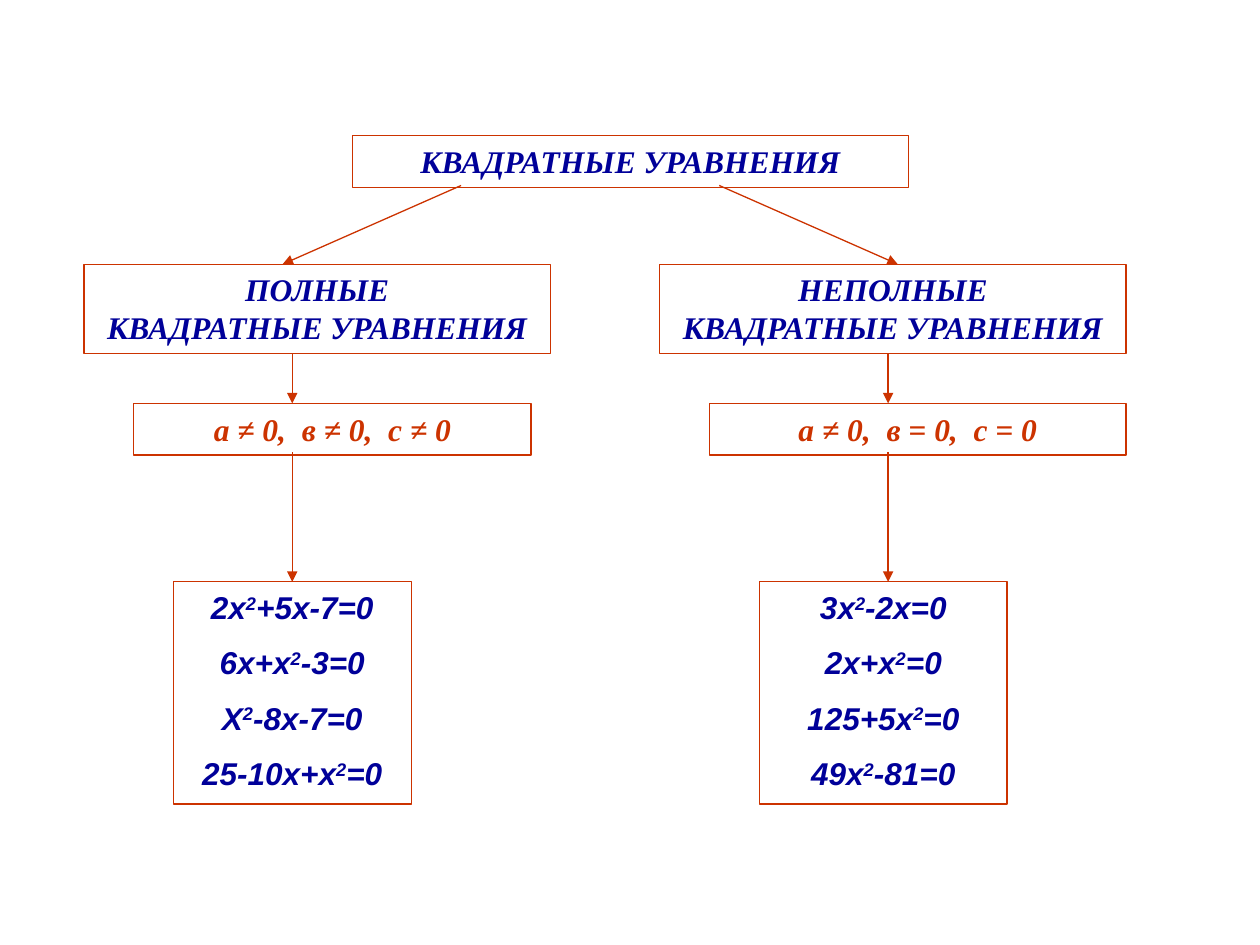
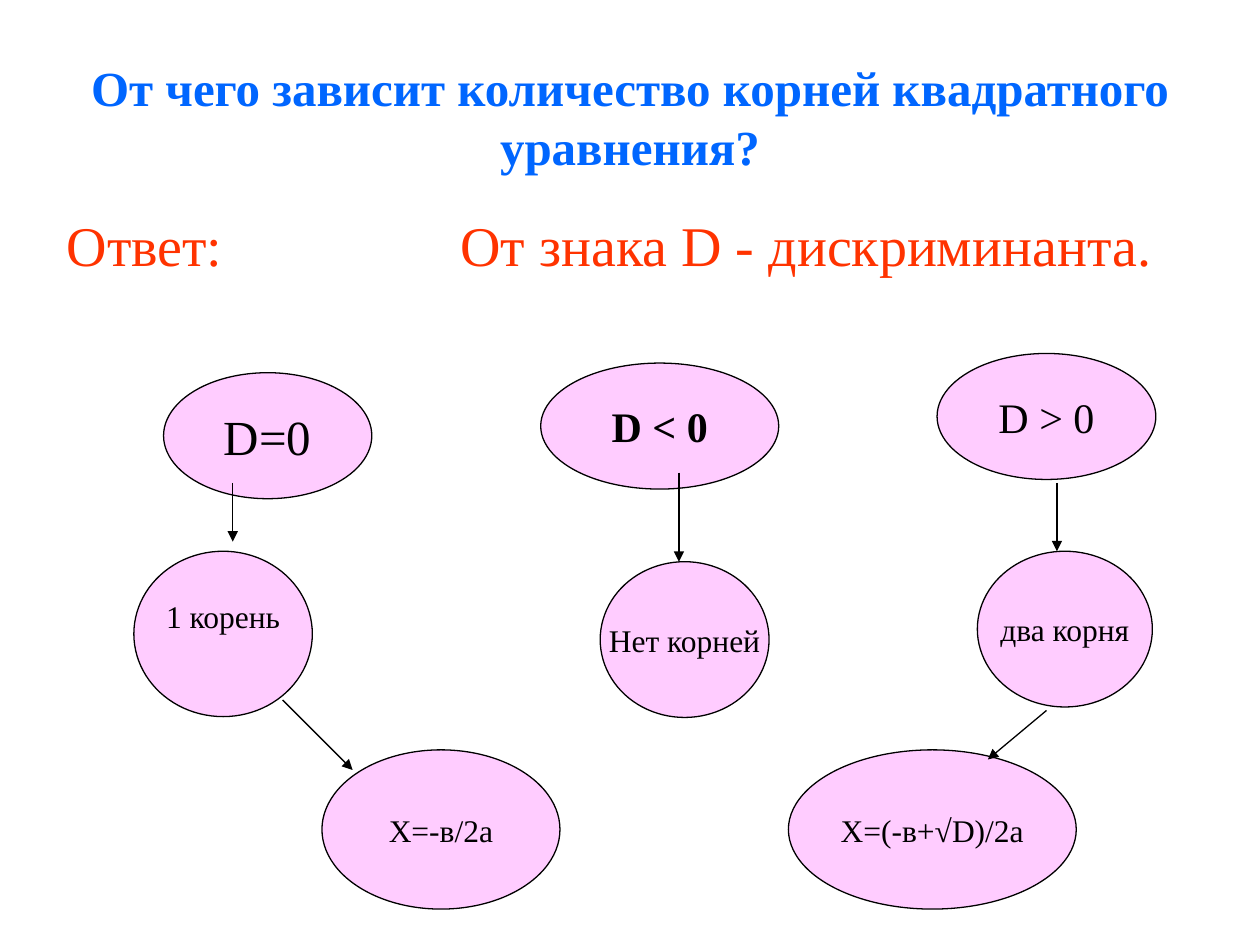
"""Build two slides on quadratic equations: their kinds and the number of their roots."""
from dataclasses import dataclass

from lxml.etree import SubElement
from pptx import Presentation
from pptx.dml.color import RGBColor
from pptx.enum.shapes import MSO_CONNECTOR, MSO_SHAPE
from pptx.enum.text import MSO_ANCHOR, PP_ALIGN
from pptx.oxml.ns import qn
from pptx.util import Pt


@dataclass(frozen=True)
class Theme:
    serif: str = "Times New Roman"
    sans: str = "Arial"
    white: str = "FFFFFF"
    black: str = "000000"
    navy: str = "000099"
    rust: str = "CC3300"
    blue: str = "0066FF"
    orange: str = "FF3300"
    pink: str = "FFCCFF"
    small: int = 18
    medium: int = 24
    large: int = 28
    answer: int = 32
    line: float = 0.75
    gap: int = 10


theme = Theme()


def write(box, lines, color, font, frame, align=PP_ALIGN.CENTER):
    for name, value in frame.items():
        setattr(box.text_frame, name, value)
    for number, line in enumerate(lines):
        para = box.text_frame.paragraphs[0] if number == 0 else box.text_frame.add_paragraph()
        para.alignment = align
        if number:
            para.space_before = Pt(theme.gap)
        if "\t" in line:
            tabs = SubElement(para._p.get_or_add_pPr(), qn("a:tabLst"))
            SubElement(tabs, qn("a:tab"), pos=str(Pt(225)), algn="l")
        for row, text in enumerate(line.split("\n")):
            if row:
                para.add_line_break()
            for piece in filter(None, text.partition("²")):
                span = para.add_run()
                span.text = piece.replace("²", "2")
                for name, value in font.items():
                    setattr(span.font, name, value)
                span.font.color.rgb = RGBColor.from_string(color)
                if piece == "²":
                    span._r.get_or_add_rPr().set("baseline", "30000")


def draw(page, kind, place, fill, line):
    shape = page.shapes.add_shape(kind, *map(Pt, place))
    shape.shadow.inherit = False
    shape.fill.solid()
    shape.fill.fore_color.rgb = RGBColor.from_string(fill)
    shape.line.color.rgb = RGBColor.from_string(line)
    shape.line.width = Pt(theme.line)
    return shape


deck = Presentation()
deck.slide_width, deck.slide_height = Pt(720), Pt(540)
kinds_page, roots_page = [deck.slides.add_slide(deck.slide_layouts[6]) for _ in range(2)]

heading_font = {"name": theme.serif, "size": Pt(theme.small), "bold": True, "italic": True}
example_font = {**heading_font, "name": theme.sans}
top_frame = {"word_wrap": True, "vertical_anchor": MSO_ANCHOR.TOP}

kind_boxes = [
    ((48, 151, 266.5, 51), ["ПОЛНЫЕ\nКВАДРАТНЫЕ УРАВНЕНИЯ"], theme.navy, heading_font),
    ((377, 151, 266.5, 51), ["НЕПОЛНЫЕ\nКВАДРАТНЫЕ УРАВНЕНИЯ"], theme.navy, heading_font),
    ((201.5, 77.5, 317.5, 29.5), ["КВАДРАТНЫЕ УРАВНЕНИЯ"], theme.navy, heading_font),
    ((76.5, 230.5, 227, 29.5), ["а ≠ 0,  в ≠ 0,  с ≠ 0"], theme.rust, heading_font),
    ((405.5, 230.5, 238, 29.5), ["а ≠ 0,  в = 0,  с = 0"], theme.rust, heading_font),
    ((434, 332.5, 141.5, 127), ["3х²-2х=0", "2х+х²=0", "125+5х²=0", "49х²-81=0"],
     theme.navy, example_font),
    ((99, 332.5, 136, 127), ["2х²+5х-7=0", "6х+х²-3=0", "Х²-8х-7=0", "25-10х+х²=0"],
     theme.navy, example_font),
]
for place, lines, color, font in kind_boxes:
    full_examples = draw(kinds_page, MSO_SHAPE.RECTANGLE, place, theme.white, theme.rust)
    write(full_examples, lines, color, font, top_frame)

title = roots_page.shapes.add_textbox(*map(Pt, (36, 21.5, 648, 90)))
write(title, ["От чего зависит количество корней квадратного уравнения?"], theme.blue,
      {"name": theme.serif, "size": Pt(theme.large), "bold": True},
      {"word_wrap": True, "vertical_anchor": MSO_ANCHOR.MIDDLE})
answer = roots_page.shapes.add_textbox(*map(Pt, (31, 116.5, 648, 356.5)))
write(answer, ["Ответ:\tОт знака D - дискриминанта."], theme.orange,
      {"name": theme.serif, "size": Pt(theme.answer)}, top_frame, PP_ALIGN.LEFT)

ovals = [
    ((93.5, 213, 119, 72), "D=0", theme.large, False, 3.6),
    ((309, 207.5, 136, 72), "D < 0", theme.medium, True, 3.6),
    ((535.5, 202, 125, 72), "D > 0", theme.medium, False, 3.6),
    ((76.5, 315, 102, 94.5), "1 корень", theme.small, False, 24),
    ((343, 321, 96.5, 89), "Нет корней", theme.small, False, 3.6),
    ((558.5, 315, 100, 89), "два корня", theme.small, False, 3.6),
    ((184, 428.5, 136, 91), "Х=-в/2а", theme.small, False, 3.6),
    ((450.5, 428.5, 164.5, 91), "Х=(-в+√D)/2а", theme.small, False, 3.6),
]
for place, text, size, bold, bottom in ovals:
    oval = draw(roots_page, MSO_SHAPE.OVAL, place, theme.pink, theme.black)
    write(oval, [text], theme.black, {"name": theme.serif, "size": Pt(size), "bold": bold},
          {"word_wrap": False, "vertical_anchor": MSO_ANCHOR.MIDDLE, "margin_bottom": Pt(bottom)})

arrows = [
    (kinds_page, theme.rust, (263.5, 106, 161.5, 151), None),
    (kinds_page, theme.rust, (411, 106, 513, 151), None),
    (kinds_page, theme.rust, (167, 202, 167, 230.5), None),
    (kinds_page, theme.rust, (507.5, 202, 507.5, 230.5), None),
    (kinds_page, theme.rust, (167, 258.5, 167, 332.5), full_examples),
    (kinds_page, theme.rust, (507.5, 258.5, 507.5, 332.5), None),
    (roots_page, theme.black, (133, 276, 133, 309.5), None),
    (roots_page, theme.black, (161.5, 400, 201.5, 440), None),
    (roots_page, theme.black, (388, 270, 388, 321), None),
    (roots_page, theme.black, (604, 276, 604, 315), None),
    (roots_page, theme.black, (598, 406, 564.5, 434), None),
]
for page, color, ends, target in arrows:
    arrow = page.shapes.add_connector(MSO_CONNECTOR.STRAIGHT, *map(Pt, ends))
    if target is not None:
        arrow.end_connect(target, 0)
    arrow.line.color.rgb = RGBColor.from_string(color)
    arrow.line.width = Pt(theme.line)
    SubElement(arrow.line._get_or_add_ln(), qn("a:tailEnd"), type="triangle")
    SubElement(arrow._element.spPr, qn("a:effectLst"))

deck.save("out.pptx")
